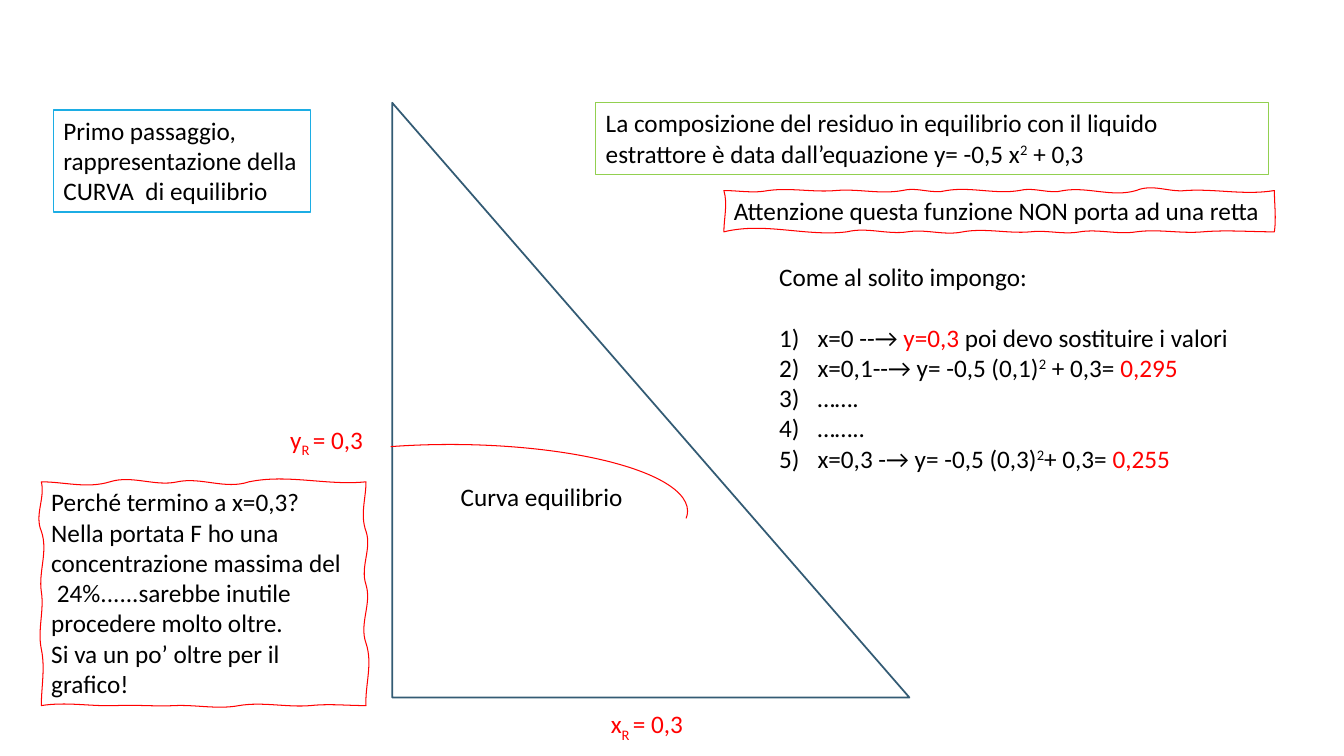
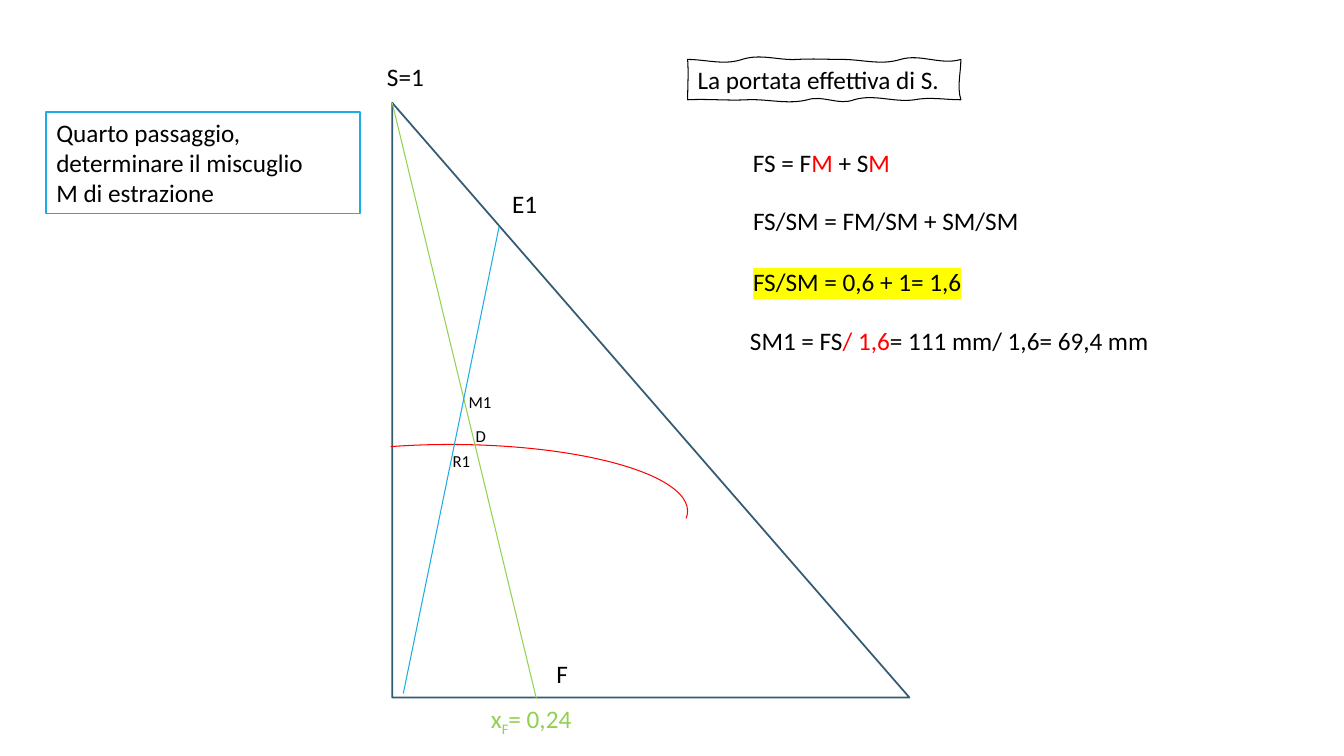
from lxml.etree import SubElement
from pptx import Presentation
from pptx.dml.color import RGBColor
from pptx.enum.shapes import MSO_CONNECTOR as Connector, MSO_SHAPE as Shape
from pptx.enum.text import MSO_ANCHOR as Anchor, MSO_AUTO_SIZE as AutoSize, PP_ALIGN as Align
from pptx.oxml.ns import qn
from pptx.util import Pt

PX = 9144
FONT = "Calibri"
LIST_INDENT = 38
BLANK_LAYOUT = 6
COLORS = {
    "black": "000000",
    "white": "FFFFFF",
    "red": "FF0000",
    "green": "92D050",
    "blue": "1CADE4",
    "navy": "335B74",
    "yellow": "FFFF00",
}
BASELINES = {"sub": "-25000", "sup": "30000"}


def style_shape(shape, fill, line, width):
    if fill:
        shape.fill.solid()
        shape.fill.fore_color.rgb = RGBColor.from_string(COLORS[fill])
    else:
        shape.fill.background()
    if line:
        shape.line.color.rgb = RGBColor.from_string(COLORS[line])
        shape.line.width = Pt(width)
    else:
        shape.line.fill.background()
    shape.shadow.inherit = False


def write_text(shape, paragraphs, size=18, wrap=True):
    frame = shape.text_frame
    frame.word_wrap = wrap
    frame.auto_size = AutoSize.SHAPE_TO_FIT_TEXT
    frame.vertical_anchor = Anchor.TOP
    for index, (runs, options) in enumerate(paragraphs):
        paragraph = frame.add_paragraph() if index else frame.paragraphs[0]
        paragraph.alignment = Align.LEFT
        if "gap" in options:
            paragraph.space_before = Pt(22)
        if "numbered" in options:
            properties = paragraph._p.get_or_add_pPr()
            properties.set("marL", str(LIST_INDENT * PX))
            properties.set("indent", str(-LIST_INDENT * PX))
            SubElement(properties, qn("a:buFont"), typeface="+mj-lt")
            SubElement(properties, qn("a:buAutoNum"), type="arabicParenR")
        for text, style in runs:
            run = paragraph.add_run()
            run.text = text
            run.font.size = Pt(size)
            color = "black"
            for word in style.split():
                if word in COLORS:
                    color = word
                elif word in BASELINES:
                    run._r.get_or_add_rPr().set("baseline", BASELINES[word])
            run.font.color.rgb = RGBColor.from_string(COLORS[color])
            if "marked" in style:
                highlight = SubElement(run._r.get_or_add_rPr(), qn("a:highlight"))
                SubElement(highlight, qn("a:srgbClr"), val=COLORS["yellow"])
            run.font.name = FONT


presentation = Presentation()
presentation.slide_width = 1333 * PX
presentation.slide_height = 750 * PX
layout = presentation.slide_layouts[BLANK_LAYOUT]
curve_slide, mixture_slide = slides = [presentation.slides.add_slide(layout) for _ in range(2)]

for slide in slides:
    triangle = slide.shapes.add_shape(
        Shape.RIGHT_TRIANGLE, 389 * PX, 102 * PX, 513 * PX, 590 * PX
    )
    style_shape(triangle, None, "navy", 1.25)
    equilibrium = slide.shapes.add_shape(Shape.ARC, 211 * PX, 441 * PX, 471 * PX, 132 * PX)
    equilibrium.adjustments[0] = 136.353
    equilibrium.adjustments[1] = 1.069
    style_shape(equilibrium, None, "red", 0.75)

for start, end, color in [
    ((389, 102), (532, 693), "green"),
    ((400, 688), (495, 225), "blue"),
]:
    connector = mixture_slide.shapes.add_connector(
        Connector.STRAIGHT, *[value * PX for value in start + end]
    )
    connector.line.color.rgb = RGBColor.from_string(COLORS[color])
    connector.line.width = Pt(0.75)
    SubElement(connector._element.spPr, qn("a:effectLst"))

panels = [
    (curve_slide, (53, 109, 255, 101), "white", "blue", 1.25, [
        ([("Primo passaggio,", "")], ""),
        ([("rappresentazione della", "")], ""),
        ([("CURVA  di equilibrio", "")], ""),
    ]),
    (curve_slide, (591, 102, 667, 71), None, "green", 0.75, [
        ([
            ("La composizione del residuo in equilibrio con il liquido "
             "estrattore è data dall’equazione y= -0,5 x", ""),
            ("2", "sup"),
            (" + 0,3", ""),
        ], ""),
    ]),
    (curve_slide, (763, 254, 485, 252), None, None, 0, [
        ([("Come al solito impongo:", "")], ""),
        ([("x=0 --→ ", ""), ("y=0,3 ", "red"), ("poi devo sostituire i valori", "")],
         "numbered gap"),
        ([("x=0,1--→ y= -0,5 (0,1)", ""), ("2", "sup"), (" + 0,3= ", ""), ("0,295", "red")],
         "numbered"),
        ([("…….", "")], "numbered"),
        ([("……..", "")], "numbered"),
        ([("x=0,3 -→ y= -0,5 (0,3)", ""), ("2", "sup"), ("+ 0,3= ", ""), ("0,255", "red")],
         "numbered"),
    ]),
    (mixture_slide, (46, 111, 311, 101), "white", "blue", 1.25, [
        ([("Quarto passaggio,", "")], ""),
        ([("determinare il miscuglio", "")], ""),
        ([("M di estrazione", "")], ""),
    ]),
    (mixture_slide, (737, 141, 187, 40), None, None, 0, [
        ([("FS = F", ""), ("M", "red"), (" + S", ""), ("M", "red")], ""),
    ]),
    (mixture_slide, (737, 199, 302, 101), None, None, 0, [
        ([("FS/SM = FM/SM + SM/SM", "")], ""),
        ([("FS/SM = 0,6 + 1= 1,6", "marked")], "gap"),
    ]),
    (mixture_slide, (734, 318, 444, 40), "white", None, 0, [
        ([("SM1 = FS", ""), ("/ 1,6", "red"), ("= 111 mm/ 1,6= 69,4 mm", "")], ""),
    ]),
]
for slide, box, fill, line, width, paragraphs in panels:
    position = [value * PX for value in box]
    if fill or line:
        panel = slide.shapes.add_shape(Shape.RECTANGLE, *position)
        style_shape(panel, fill, line, width)
    else:
        panel = slide.shapes.add_textbox(*position)
    write_text(panel, paragraphs)

labels = [
    (curve_slide, (596, 698, 100, 40), 18, [("x", "red"), ("R ", "red sub"), ("= 0,3", "red")]),
    (curve_slide, (278, 416, 103, 40), 18, [("y", "red"), ("R ", "red sub"), ("= 0,3", "red")]),
    (curve_slide, (447, 473, 182, 40), 18, [("Curva equilibrio", "")]),
    (mixture_slide, (477, 693, 115, 40), 18,
     [("x", "green"), ("F", "green sub"), ("= 0,24", "green")]),
    (mixture_slide, (374, 56, 63, 40), 18, [("S=1", "")]),
    (mixture_slide, (542, 648, 31, 40), 18, [("F", "")]),
    (mixture_slide, (498, 182, 45, 40), 18, [("E1", "")]),
    (mixture_slide, (462, 417, 30, 30), 12, [("D", "")]),
    (mixture_slide, (439, 442, 38, 30), 12, [("R1", "")]),
    (mixture_slide, (455, 384, 44, 30), 12, [("M1", "")]),
]
for slide, box, size, runs in labels:
    label = slide.shapes.add_textbox(*[value * PX for value in box])
    write_text(label, [(runs, "")], size, wrap=False)

sketched_notes = [
    (curve_slide, "red", [
        [(762, 3), (829, 2), (895, 4), (939, 4), (1011, 4), (1055, 4), (1127, 7),
         (1176, 2), (1264, 5)],
        [(230, 2)],
        [(1193, -2), (1127, -3), (1071, -3), (1022, -2), (955, -4), (900, -3),
         (840, -5), (718, -10)],
        [(189, 4)],
    ], ["Attenzione questa funzione NON porta ad una retta"]),
    (curve_slide, "red", [
        [(109, 7), (176, 5), (247, 8), (363, 4)],
        [(527, -6), (580, -6), (638, -7), (700, -1)],
        [(308, -2), (237, -4), (173, -1), (115, -1), (41, -4)],
        [(644, 4), (587, 3), (527, 7), (478, 4)],
    ], [
        "Perché termino a x=0,3?",
        "Nella portata F ho una concentrazione massima del",
        " 24%......sarebbe inutile procedere molto oltre.",
        "Si va un po’ oltre per il grafico!",
    ]),
    (mixture_slide, "black", [
        [(736, 6), (790, 1), (836, 0), (893, 6), (953, 6)],
        [(99, -4)],
        [(907, -3), (847, -6), (801, -5), (741, -1), (682, -1)],
        [(59, 1)],
    ], ["La portata effettiva di S."]),
]
for slide, color, sides, lines in sketched_notes:
    right, bottom, left, top = [side[-1][0] for side in sides]
    segments = []
    for side, start, edge, horizontal in zip(
        sides, (left, top, right, bottom), (top, right, bottom, left), (True, False) * 2
    ):
        previous_swell = 0
        for knot, swell in side:
            third = (knot - start) / 3
            curve = [
                (start + third, edge - previous_swell),
                (knot - third, edge + swell),
                (knot, edge),
            ]
            segments.append(curve if horizontal else [(y, x) for x, y in curve])
            start, previous_swell = knot, swell
    builder = slide.shapes.build_freeform(left * PX, top * PX, scale=1.0)
    builder.add_line_segments([(x * PX, y * PX) for *_, (x, y) in segments], close=True)
    note = builder.convert_to_shape()
    straight_sides = list(note._element.iter(qn("a:lnTo")))
    for straight, curve in zip(straight_sides, segments):
        straight.clear()
        bezier = SubElement(straight.getparent(), qn("a:cubicBezTo"))
        straight.getparent().replace(straight, bezier)
        for x, y in curve:
            SubElement(bezier, qn("a:pt"), x=str(round((x - left) * PX)),
                       y=str(round((y - top) * PX)))
    style_shape(note, None, color, 0.75)
    write_text(note, [([(text, "")], "") for text in lines])

presentation.save("out.pptx")
